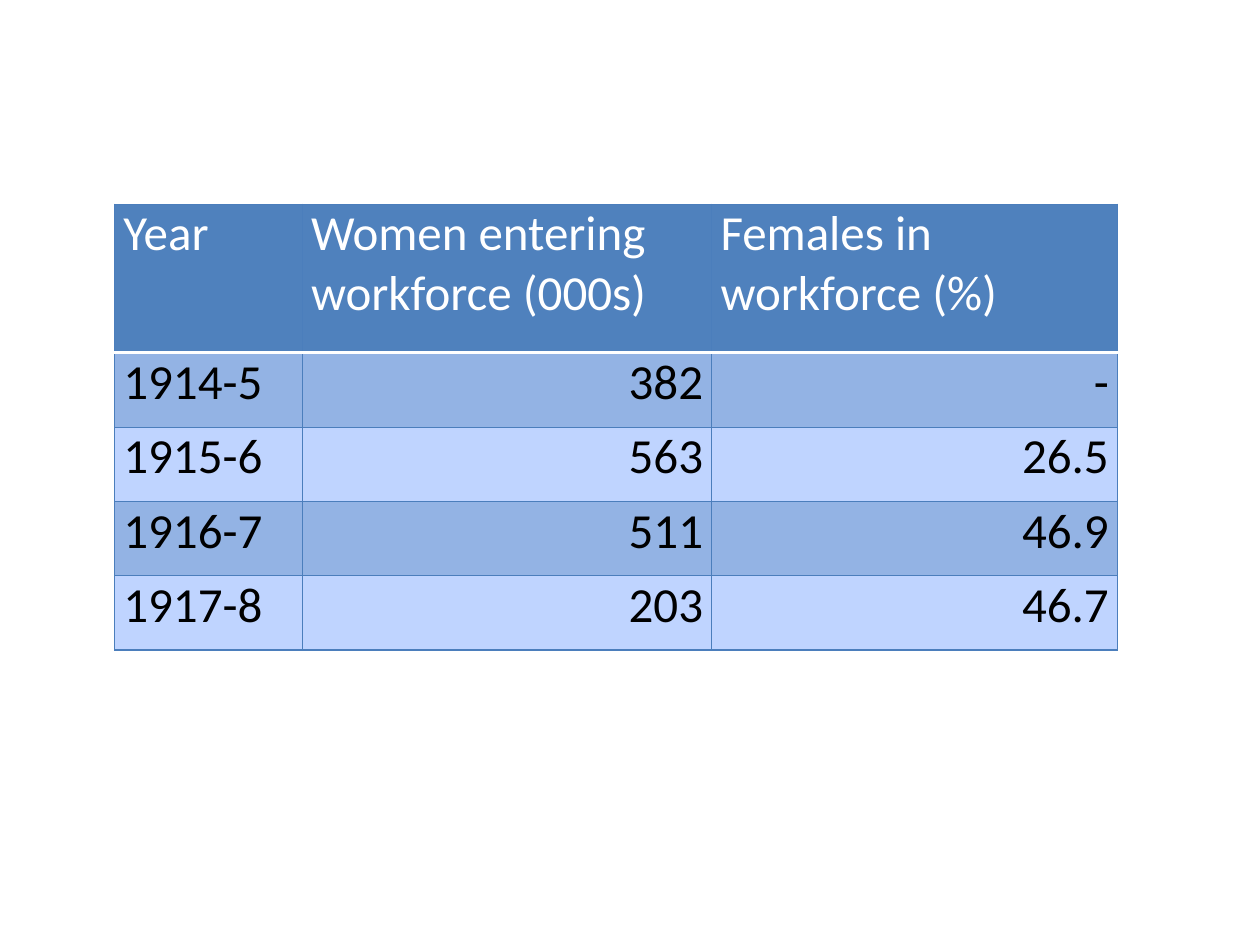
from lxml.etree import SubElement
from pptx import Presentation
from pptx.dml.color import RGBColor
from pptx.enum.text import MSO_ANCHOR as Anchor, PP_ALIGN as Align
from pptx.oxml.ns import qn
from pptx.util import Inches, Pt

# Content
HEADER = ("Year", "Women entering workforce (000s)", "Females in workforce (%)")
RECORDS = [
    ("1914-5", "382", "-"),
    ("1915-6", "563", "26.5"),
    ("1916-7", "511", "46.9"),
    ("1917-8", "203", "46.7"),
]

# Format
COLORS = {
    "header": "4F81BD",
    "dark band": "93B3E4",
    "light band": "BFD4FF",
    "grid": "4B7EBC",
    "header text": "FFFFFF",
    "body text": "000000",
    "header rule": "FFFFFF",
}
LEFT, TOP = 0.91, 1.62
COLUMN_WIDTHS = (1.49, 3.25, 3.22)
HEADER_HEIGHT, ROW_HEIGHT = 1.18, 0.59
CELL_FORMAT = {
    "margin_left": Inches(0.07),
    "margin_right": Inches(0.07),
    "margin_top": 0,
    "margin_bottom": 0,
    "vertical_anchor": Anchor.TOP,
}
FONT_FORMAT = {"name": "Calibri", "size": Pt(28), "bold": False}


def set_border(cell, side, color, width):
    line = SubElement(cell._tc.get_or_add_tcPr(), qn(f"a:ln{side}"), w=str(Pt(width)))
    fill = SubElement(line, qn("a:solidFill"))
    SubElement(fill, qn("a:srgbClr"), val=COLORS[color])


def fill_cell(cell, text, row, column):
    for name, value in CELL_FORMAT.items():
        setattr(cell, name, value)

    # Borders, with a white rule between header and body
    rule_side = {0: "B", 1: "T"}.get(row)
    for side in "LRTB":
        if side == rule_side:
            set_border(cell, side, "header rule", 2)
        else:
            set_border(cell, side, "grid", 0.75)

    # Banded fill
    band = "header" if row == 0 else ("light band", "dark band")[row % 2]
    cell.fill.solid()
    cell.fill.fore_color.rgb = RGBColor.from_string(COLORS[band])

    # Text, with figures aligned right
    cell.text = text
    paragraph = cell.text_frame.paragraphs[0]
    paragraph.alignment = Align.RIGHT if row and column else Align.LEFT
    font = paragraph.runs[0].font
    for name, value in FONT_FORMAT.items():
        setattr(font, name, value)
    text_color = "body text" if row else "header text"
    font.color.rgb = RGBColor.from_string(COLORS[text_color])


def main():
    presentation = Presentation()
    presentation.slide_width, presentation.slide_height = Inches(10), Inches(7.5)
    slide = presentation.slides.add_slide(presentation.slide_layouts[6])

    # Workforce table
    rows = [HEADER, *RECORDS]
    heights = [HEADER_HEIGHT] + [ROW_HEIGHT] * len(RECORDS)
    table = slide.shapes.add_table(
        len(rows), len(HEADER), Inches(LEFT), Inches(TOP),
        Inches(sum(COLUMN_WIDTHS)), Inches(sum(heights)),
    ).table
    table.horz_banding = False
    for column, width in zip(table.columns, COLUMN_WIDTHS):
        column.width = Inches(width)
    for row, height in zip(table.rows, heights):
        row.height = Inches(height)
    for row_index, texts in enumerate(rows):
        for column_index, text in enumerate(texts):
            fill_cell(table.cell(row_index, column_index), text, row_index, column_index)

    presentation.save("out.pptx")


if __name__ == "__main__":
    main()
